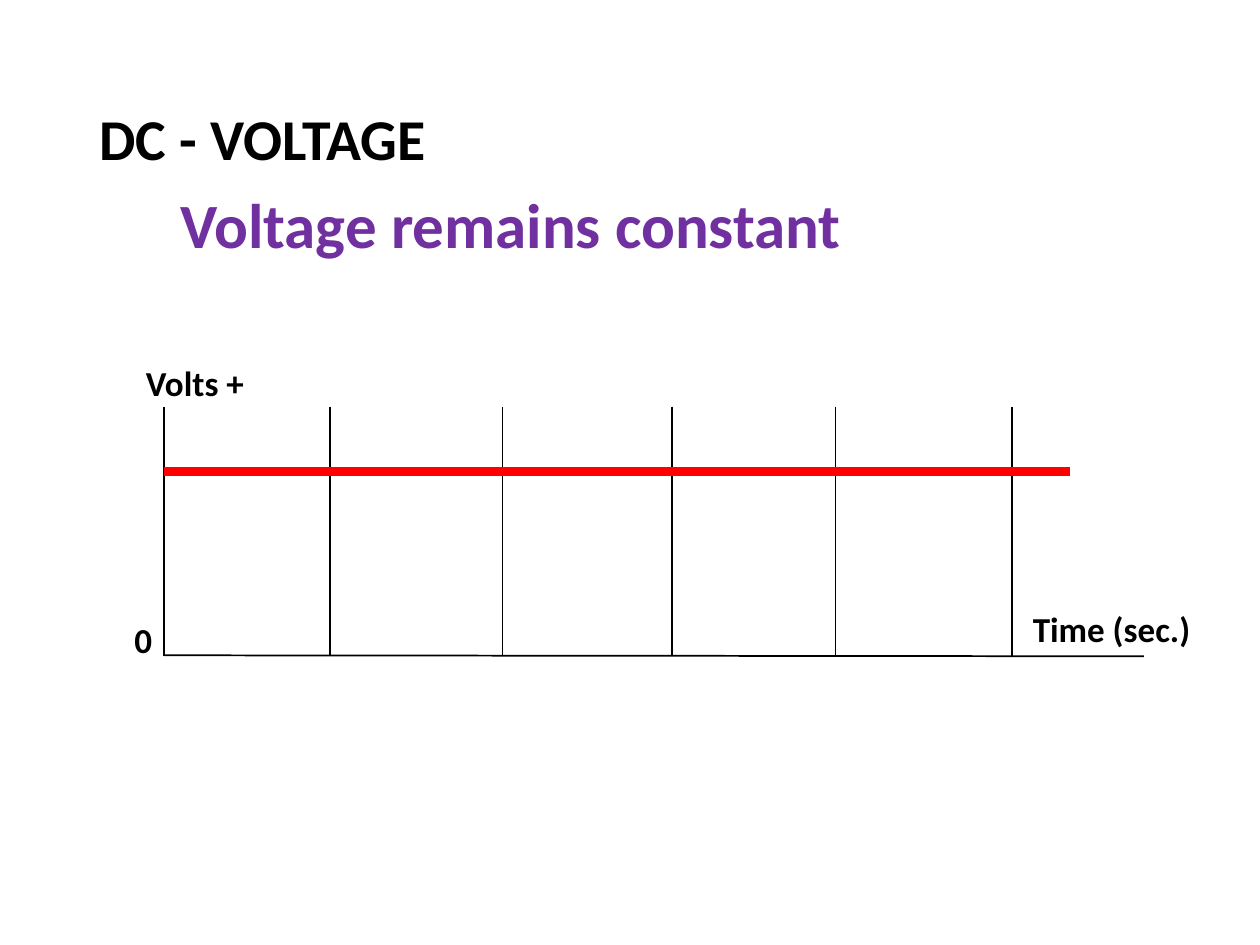
from dataclasses import dataclass

import pptx
import pptx.dml.color
import pptx.enum.shapes
import pptx.enum.text
import pptx.oxml
import pptx.util

Cm = pptx.util.Cm
Pt = pptx.util.Pt
RGB = pptx.dml.color.RGBColor


@dataclass(frozen=True)
class Theme:
    font: str = "Calibri"
    ink: str = "000000"
    note: str = "7030A0"
    trace: str = "FF0000"
    head: float = 33
    big: float = 36
    small: float = 20
    thin: float = 1
    thick: float = 5.25


@dataclass(frozen=True)
class Label:
    text: str
    left: float
    top: float
    width: float
    height: float
    size: float
    color: str


@dataclass(frozen=True)
class Line:
    x1: float
    y1: float
    x2: float
    y2: float
    color: str
    weight: float


def style(frame, size: float, color: str, theme: Theme) -> None:
    for run in frame.paragraphs[0].runs:
        font = run.font
        font.name = theme.font
        font.size = Pt(size)
        font.bold = True
        font.color.rgb = RGB.from_string(color)


def draw_title(slide, text: str, theme: Theme) -> None:
    title = slide.shapes.title
    title.left, title.top = Cm(1.75), Cm(1.02)
    title.width, title.height = Cm(21.9), Cm(3.68)
    frame = title.text_frame
    frame.text = text
    frame.vertical_anchor = pptx.enum.text.MSO_ANCHOR.MIDDLE
    frame.paragraphs[0].alignment = pptx.enum.text.PP_ALIGN.LEFT
    frame.paragraphs[0].line_spacing = 0.9
    style(frame, theme.head, theme.ink, theme)


def draw_label(slide, label: Label, theme: Theme) -> None:
    box = slide.shapes.add_textbox(
        Cm(label.left), Cm(label.top), Cm(label.width), Cm(label.height)
    )
    frame = box.text_frame
    frame.word_wrap = False
    frame.auto_size = pptx.enum.text.MSO_AUTO_SIZE.SHAPE_TO_FIT_TEXT
    frame.text = label.text
    style(frame, label.size, label.color, theme)


def draw_line(slide, line: Line) -> None:
    rule = slide.shapes.add_connector(
        pptx.enum.shapes.MSO_CONNECTOR.STRAIGHT,
        Cm(line.x1), Cm(line.y1), Cm(line.x2), Cm(line.y2),
    )
    rule.line.color.rgb = RGB.from_string(line.color)
    rule.line.width = Pt(line.weight)
    props = rule._element.spPr
    props.append(props.makeelement(pptx.oxml.ns.qn("a:effectLst"), {}))


def main() -> None:
    theme = Theme()
    deck = pptx.Presentation()
    deck.slide_width, deck.slide_height = Cm(25.4), Cm(19.05)
    slide = deck.slides.add_slide(deck.slide_layouts[5])

    left, top, base = 3.3, 8.2, 13.23
    ticks = (left, 6.65, 10.13, 13.54, 16.84, 20.4)
    level = 9.5
    lines = [Line(left, base - 0.02, 23.06, base, theme.ink, theme.thin)]
    lines += [Line(x, top, x, base, theme.ink, theme.thin) for x in ticks]
    lines.append(Line(left, level, 21.56, level, theme.trace, theme.thick))
    labels = (
        Label("Volts +", 2.69, 7.16, 2.51, 1.12, theme.small, theme.ink),
        Label("0", 2.46, 12.34, 0.86, 1.12, theme.small, theme.ink),
        Label("Time (sec.)", 20.57, 12.12, 3.71, 1.12, theme.small, theme.ink),
        Label("Voltage remains constant", 3.38, 3.61, 13.97, 1.8, theme.big, theme.note),
    )

    draw_title(slide, "DC - VOLTAGE", theme)
    for line in lines:
        draw_line(slide, line)
    for label in labels:
        draw_label(slide, label, theme)
    deck.save("out.pptx")


if __name__ == "__main__":
    main()
